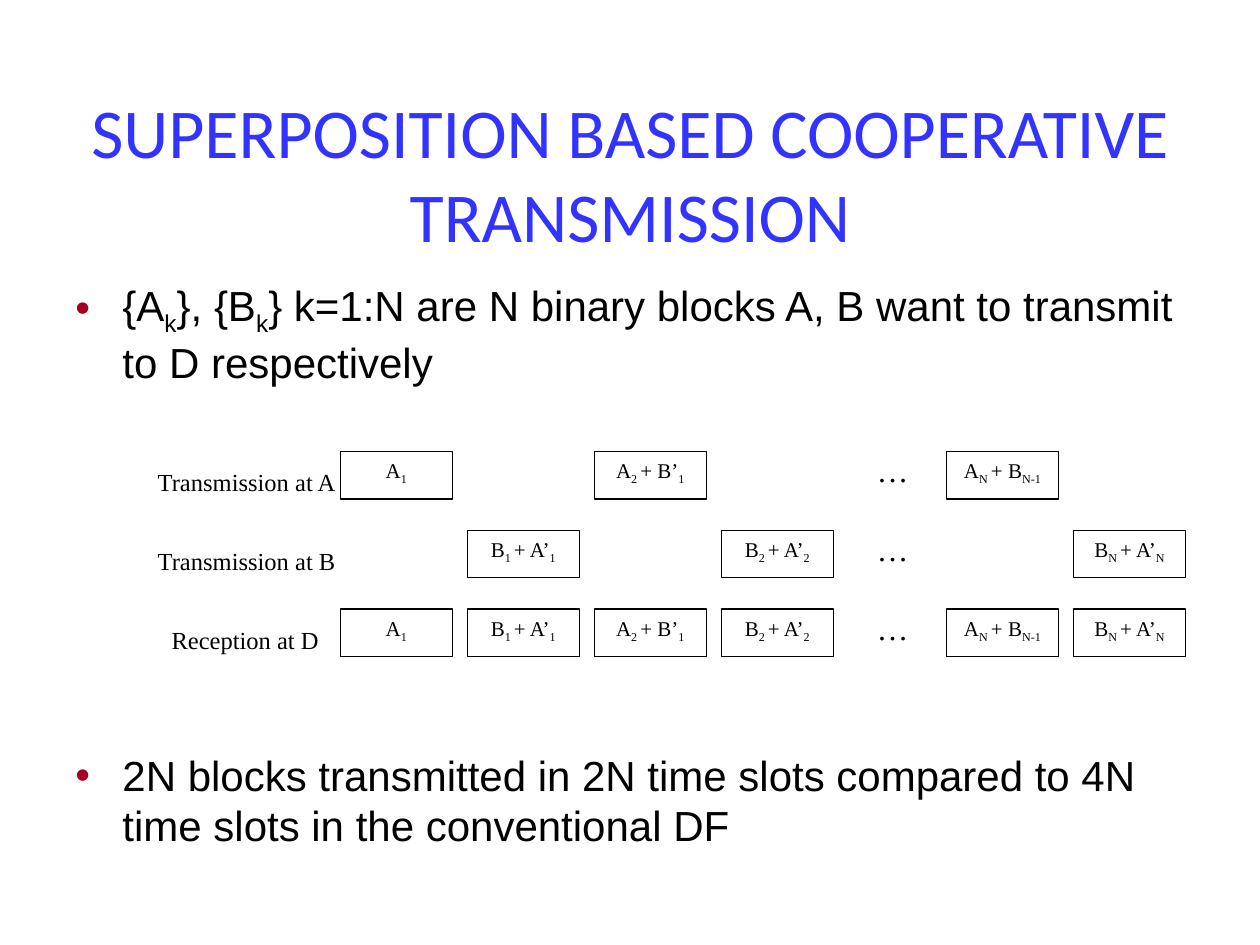
from dataclasses import dataclass

from lxml import etree
from pptx import Presentation
from pptx.dml.color import RGBColor
from pptx.enum.shapes import MSO_SHAPE
from pptx.enum.text import MSO_ANCHOR, MSO_AUTO_SIZE, PP_ALIGN
from pptx.oxml.ns import qn
from pptx.util import Cm, Pt

RECTANGLE = MSO_SHAPE.RECTANGLE
TOP, MIDDLE = MSO_ANCHOR.TOP, MSO_ANCHOR.MIDDLE
LEFT, CENTER = PP_ALIGN.LEFT, PP_ALIGN.CENTER
NO_AUTOFIT = MSO_AUTO_SIZE.NONE


@dataclass(frozen=True)
class Theme:
    title_color: str = "3333FF"
    bullet_color: str = "A50021"
    ink: str = "000000"
    paper: str = "FFFFFF"
    title_font: str = "Calibri"
    body_font: str = "Arial"
    diagram_font: str = "Times New Roman"
    title_size: float = 40
    body_size: float = 24
    dots_size: float = 18
    label_size: float = 14
    block_size: float = 12
    block_line: float = 0.75


THEME = Theme()

# Every second part of a text tuple is a subscript.
TITLE = ("SUPERPOSITION BASED COOPERATIVE TRANSMISSION",)
BULLETS = [
    (("{A", "k", "}, {B", "k",
      "} k=1:N are N binary blocks A, B want to transmit to D respectively"), 0),
    (("2N blocks transmitted in 2N time slots compared to 4N time slots "
      "in the conventional DF",), 207),
]
BLOCKS = [
    ("A", "1"),
    ("B", "1 ", "+ A’", "1"),
    ("A", "2 ", "+ B’", "1"),
    ("B", "2 ", "+ A’", "2"),
    ("A", "N ", "+ B", "N-1"),
    ("B", "N ", "+ A’", "N"),
]
ROWS = [
    ("Transmission at A", 3.18, BLOCKS[0::2], (0, 2, 4)),
    ("Transmission at B", 3.18, BLOCKS[1::2], (1, 3, 5)),
    ("Reception at D", 3.46, BLOCKS, range(6)),
]

GRID_LEFT, GRID_TOP = 6.86, 9.1
COLUMN_STEP, ROW_STEP = 2.56, 1.59
BLOCK_WIDTH, BLOCK_HEIGHT = 2.26, 0.96
DOTS_LEFT, DOTS_COLUMN, DOTS_GAP = 17.68, 4, 1.98
LABEL_DROP = 0.32


def write(paragraph, parts, font, size, color=THEME.ink, align=LEFT,
          space_before=0, bullet=False):
    paragraph.alignment = align
    paragraph.space_before = Pt(space_before)
    if bullet:
        properties = paragraph._p.get_or_add_pPr()
        properties.set("marL", str(Cm(0.95)))
        properties.set("indent", str(-Cm(0.95)))
        bullet_color = etree.SubElement(properties, qn("a:buClr"))
        etree.SubElement(bullet_color, qn("a:srgbClr"), val=THEME.bullet_color)
        etree.SubElement(properties, qn("a:buFont"), typeface=font)
        etree.SubElement(properties, qn("a:buChar"), char="•")
    for index, part in enumerate(parts):
        run = paragraph.add_run()
        run.text = part
        run.font.name = font
        run.font.size = Pt(size)
        run.font.color.rgb = RGBColor.from_string(color)
        if index % 2:
            run._r.get_or_add_rPr().set("baseline", "-25000")


def add_text_box(slide, left, top, width, height, inset=True):
    frame = slide.shapes.add_textbox(Cm(left), Cm(top), Cm(width), Cm(height)).text_frame
    frame.word_wrap = True
    if not inset:
        frame.margin_left = frame.margin_right = 0
        frame.margin_top = frame.margin_bottom = 0
    return frame


def add_block(slide, parts, column, top):
    left = GRID_LEFT + column * COLUMN_STEP + (DOTS_GAP if column >= DOTS_COLUMN else 0)
    block = slide.shapes.add_shape(
        RECTANGLE, Cm(left), Cm(top), Cm(BLOCK_WIDTH), Cm(BLOCK_HEIGHT))
    block.shadow.inherit = False
    block.fill.solid()
    block.fill.fore_color.rgb = RGBColor.from_string(THEME.paper)
    block.line.color.rgb = RGBColor.from_string(THEME.ink)
    block.line.width = Pt(THEME.block_line)
    block.text_frame.word_wrap = True
    block.text_frame.vertical_anchor = TOP
    write(block.text_frame.paragraphs[0], parts, THEME.diagram_font,
          THEME.block_size, align=CENTER)


def add_row(slide, row_index, label, label_left, blocks, columns):
    top = GRID_TOP + row_index * ROW_STEP
    for parts, column in zip(blocks, columns):
        add_block(slide, parts, column, top)
    label_frame = add_text_box(slide, label_left, top + LABEL_DROP, 3.68, 0.64, inset=False)
    write(label_frame.paragraphs[0], (label,), THEME.diagram_font, THEME.label_size)
    dots_frame = add_text_box(slide, DOTS_LEFT, top, 1.14, 1.27, inset=False)
    write(dots_frame.paragraphs[0], ("…",), THEME.diagram_font, THEME.dots_size)


def add_title(slide):
    title = slide.shapes.title
    title.left, title.top = Cm(1.27), Cm(2.11)
    title.width, title.height = Cm(22.86), Cm(2.74)
    frame = title.text_frame
    frame.auto_size = NO_AUTOFIT
    frame.vertical_anchor = MIDDLE
    write(frame.paragraphs[0], TITLE, THEME.title_font, THEME.title_size,
          color=THEME.title_color, align=CENTER)


def add_bullets(slide):
    frame = add_text_box(slide, 1.27, 5.51, 22.86, 12.9)
    for index, (parts, space_before) in enumerate(BULLETS):
        paragraph = frame.add_paragraph() if index else frame.paragraphs[0]
        write(paragraph, parts, THEME.body_font, THEME.body_size,
              space_before=space_before, bullet=True)


def main():
    presentation = Presentation()
    presentation.slide_width, presentation.slide_height = Cm(25.4), Cm(19.05)
    slide = presentation.slides.add_slide(presentation.slide_layouts[5])
    add_title(slide)
    add_bullets(slide)
    for row_index, row in enumerate(ROWS):
        add_row(slide, row_index, *row)
    presentation.save("out.pptx")


if __name__ == "__main__":
    main()
